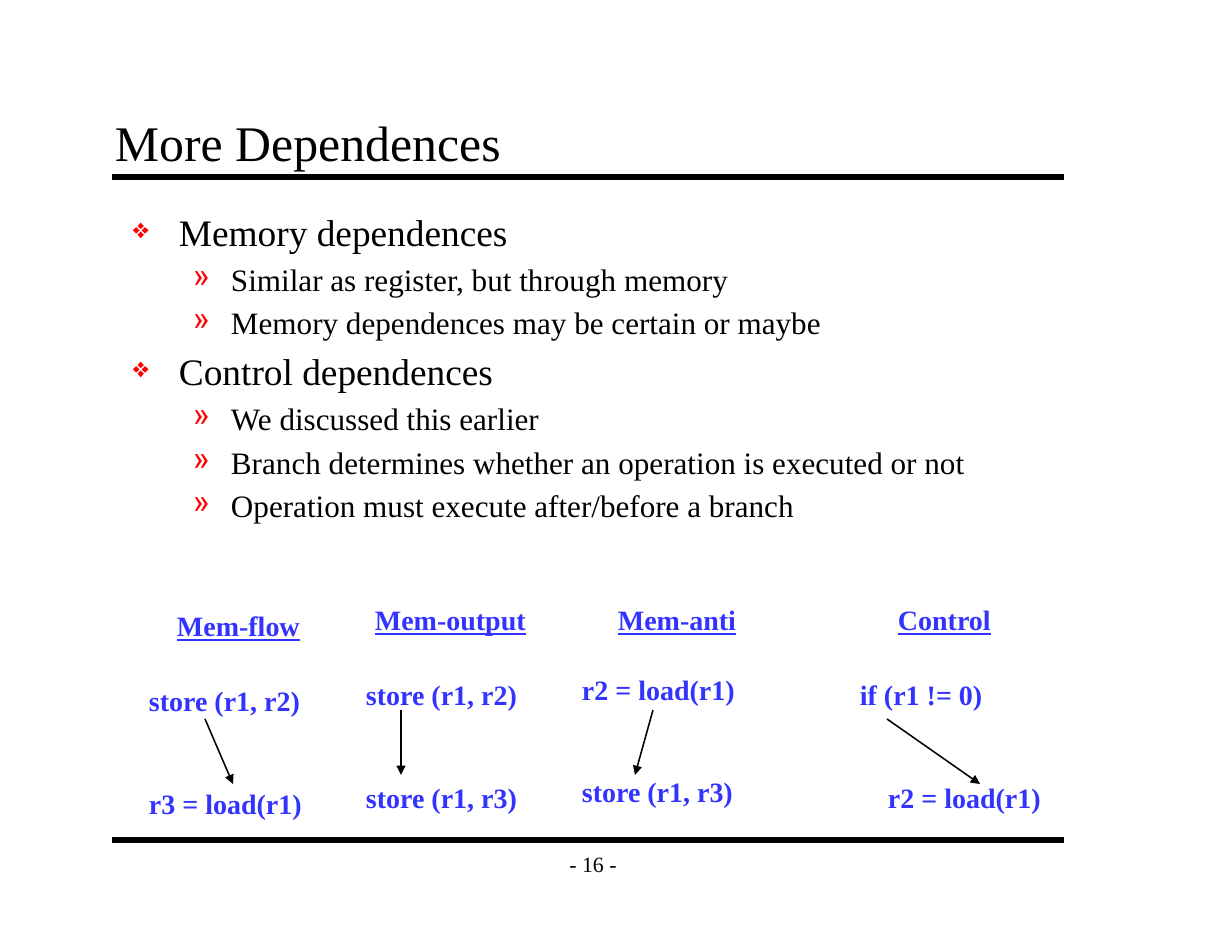
from dataclasses import dataclass
from typing import Optional

from lxml import etree
from pptx import Presentation, util as u
from pptx.dml.color import RGBColor
from pptx.enum import shapes, text
from pptx.oxml.ns import qn

PX = 914400 / 112
BLACK, BLUE, RED = "000000", "3333FF", "FF0000"
FONT = "Times New Roman"


@dataclass
class Level:
    size: int
    left: int
    hang: int
    mark: str
    scale: int


@dataclass
class Line:
    words: str
    level: Optional[Level] = None
    left: int = 0
    gap: int = 0


@dataclass
class Case:
    name: str
    head: tuple
    code: tuple
    lines: list
    arrow: tuple


TOP = Level(24, 46, 46, "❖", 75)
SUB = Level(20, 98, 38, "»", 100)
GAP = 44

POINTS = [
    Line("Memory dependences", TOP),
    Line("Similar as register, but through memory", SUB),
    Line("Memory dependences may be certain or maybe", SUB),
    Line("Control dependences", TOP),
    Line("We discussed this earlier", SUB),
    Line("Branch determines whether an operation is executed or not", SUB),
    Line("Operation must execute after/before a branch", SUB),
]

CASES = [
    Case("Mem-flow", (166, 603, 146, 45), (138, 678, 176, 146),
         [Line("store (r1, r2)"), Line("r3 = load(r1)", gap=GAP)],
         (205, 719, 233, 784)),
    Case("Mem-output", (364, 597, 174, 45), (355, 672, 175, 146),
         [Line("store (r1, r2)"), Line("store (r1, r3)", gap=GAP)],
         (401, 710, 401, 775)),
    Case("Mem-anti", (607, 597, 141, 45), (571, 666, 176, 146),
         [Line("r2 = load(r1)"), Line("store (r1, r3)", gap=GAP)],
         (653, 710, 635, 775)),
    Case("Control", (887, 597, 116, 45), (849, 672, 204, 146),
         [Line("if (r1 != 0)"), Line("r2 = load(r1)", left=28, gap=GAP)],
         (887, 719, 980, 784)),
]


def px(n: int) -> int:
    return round(n * PX)


def tint(color: str) -> RGBColor:
    return RGBColor.from_string(color)


def add(node, tag: str, **attrs):
    return etree.SubElement(node, qn(tag), attrs)


def mark(para, level: Level) -> None:
    props = para._p.get_or_add_pPr()
    props.set("marL", str(px(level.left)))
    props.set("indent", str(-px(level.hang)))
    add(add(props, "a:spcBef"), "a:spcPct", val="20000")
    add(add(props, "a:buClr"), "a:srgbClr", val=RED)
    add(props, "a:buSzPct", val=str(level.scale * 1000))
    add(props, "a:buChar", char=level.mark)


def write(slide, box: tuple, lines: list, *, size: int = 18,
          color: str = BLACK, bold: bool = False, under: bool = False,
          wrap: bool = False, inset: tuple = (11, 6),
          align=text.PP_ALIGN.LEFT, anchor=text.MSO_ANCHOR.TOP) -> None:
    frame = slide.shapes.add_textbox(*map(px, box)).text_frame
    frame.word_wrap = wrap
    frame.vertical_anchor = anchor
    frame.margin_left = frame.margin_right = px(inset[0])
    frame.margin_top = frame.margin_bottom = px(inset[1])
    for i, line in enumerate(lines):
        para = frame.add_paragraph() if i else frame.paragraphs[0]
        para.alignment = align
        if line.level:
            mark(para, line.level)
        if line.gap:
            para.space_before = u.Pt(line.gap)
        if line.left:
            para._p.get_or_add_pPr().set("marL", str(px(line.left)))
        run = para.add_run()
        run.text = line.words
        font = run.font
        font.name = FONT
        font.size = u.Pt(line.level.size if line.level else size)
        font.bold, font.underline = bold, under
        font.color.rgb = tint(color)


def rule(slide, ends: tuple, width: int, arrow: bool = False) -> None:
    line = slide.shapes.add_connector(
        shapes.MSO_CONNECTOR.STRAIGHT, *map(px, ends))
    line.line.width = u.Pt(width)
    line.line.color.rgb = tint(BLACK)
    if arrow:
        add(line.line._get_or_add_ln(), "a:tailEnd", type="triangle")
    add(line._element.spPr, "a:effectLst")


def draw(slide, case: Case) -> None:
    write(slide, case.head, [Line(case.name)],
          color=BLUE, bold=True, under=True)
    write(slide, case.code, case.lines, color=BLUE, bold=True)
    rule(slide, case.arrow, 1, arrow=True)


def main() -> None:
    deck = Presentation()
    deck.slide_width, deck.slide_height = u.Inches(11), u.Inches(8.5)
    slide = deck.slides.add_slide(deck.slide_layouts[6])
    for y in (177, 840):
        rule(slide, (112, y, 1064, y), 4)
    write(slide, (551, 840, 84, 47), [Line("- 16 -")], size=14,
          inset=(12, 7), align=text.PP_ALIGN.CENTER,
          anchor=text.MSO_ANCHOR.MIDDLE)
    write(slide, (103, 103, 952, 75), [Line("More Dependences")], size=32,
          wrap=True, inset=(12, 7), anchor=text.MSO_ANCHOR.BOTTOM)
    write(slide, (121, 202, 943, 638), POINTS, wrap=True, inset=(12, 7))
    for case in CASES:
        draw(slide, case)
    deck.save("out.pptx")


if __name__ == "__main__":
    main()
